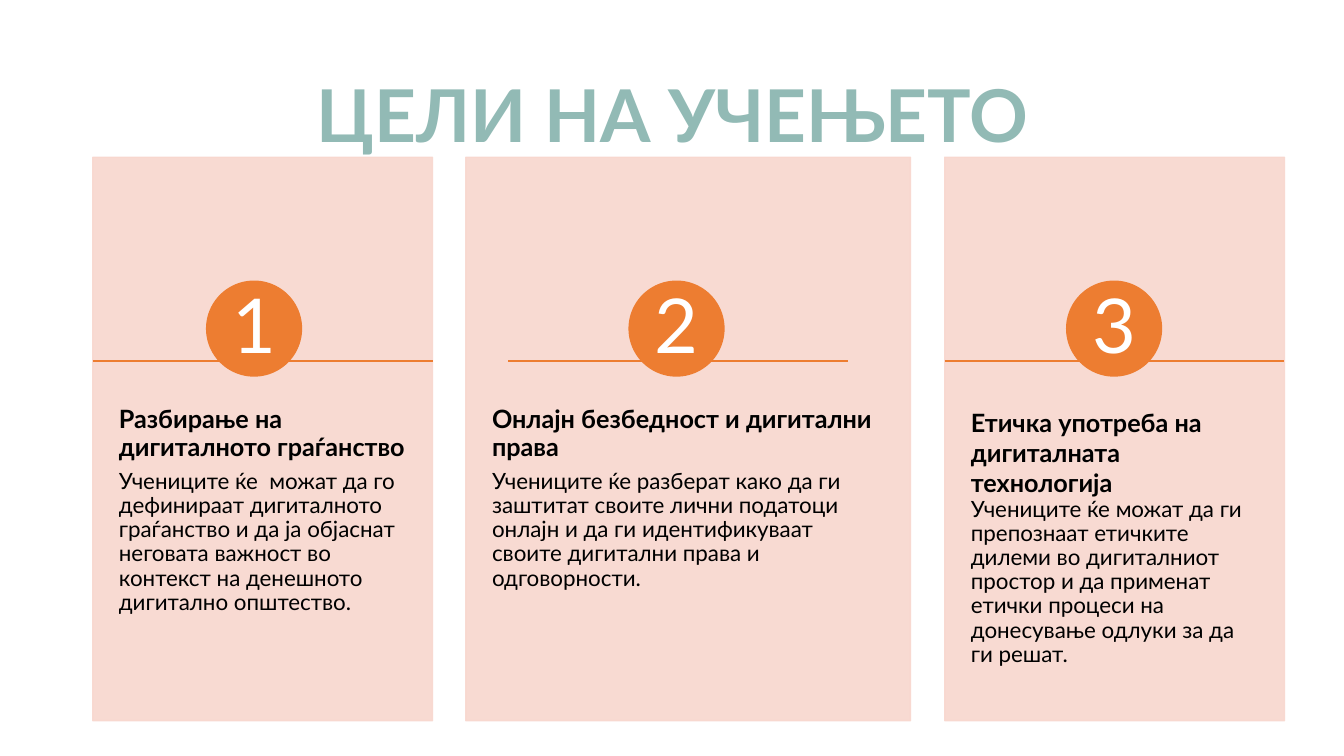
from pptx import Presentation
from pptx import util as u
from pptx.dml.color import RGBColor
from pptx.enum import shapes, text
from pptx.oxml import parse_xml
from pptx.oxml.ns import nsdecls

PX = 9144
FONT = "Lato"
COLORS = {"title": "92BAB5", "card": "F8D7CE", "accent": "ED7D31",
          "ink": "000000", "white": "FFFFFF"}

CARD_TOP, CARD_HEIGHT = 156, 559
CARDS = [
    dict(left=92, width=337, circle_offset=113, rule_offset=0,
         heading="Разбирање на дигиталното граѓанство",
         body="Учениците ќе  можат да го дефинираат дигиталното граѓанство и да ја "
              "објаснат неговата важност во контекст на денешното дигитално општество."),
    dict(left=462, width=441, circle_offset=162, rule_offset=42,
         heading="Онлајн безбедност и дигитални права",
         body="Учениците ќе разберат како да ги заштитат своите лични податоци онлајн "
              "и да ги идентификуваат своите дигитални права и одговорности."),
    dict(left=937, width=337, circle_offset=121, rule_offset=0,
         heading="Етичка употреба на дигиталната технологија",
         heading_spacing=1.0, heading_after=0,
         body="Учениците ќе можат да ги препознаат етичките дилеми во дигиталниот "
              "простор и да применат етички процеси на донесување одлуки за да ги решат."),
]


def px(*lengths):
    return [u.Emu(length * PX) for length in lengths]


def color(name):
    return RGBColor.from_string(COLORS[name])


def write(para, words, size, ink="ink", bold=False, align=text.PP_ALIGN.LEFT,
          spacing=0.9, after=6):
    para.alignment = align
    para.line_spacing = spacing
    para.space_before = u.Pt(0)
    para.space_after = u.Pt(after)
    span = para.add_run()
    span.text = words
    span.font.name = FONT
    span.font.size = u.Pt(size)
    span.font.bold = bold
    span.font.color.rgb = color(ink)


def set_frame(frame, side, end, anchor):
    frame.word_wrap = True
    frame.auto_size = text.MSO_AUTO_SIZE.NONE
    frame.vertical_anchor = anchor
    frame.margin_left = frame.margin_right = px(side)[0]
    frame.margin_top = frame.margin_bottom = px(end)[0]


def add_filled(page, kind, box, fill, opacity=100):
    shape = page.shapes.add_shape(kind, *px(*box))
    shape.shadow.inherit = False
    shape.fill.solid()
    shape.fill.fore_color.rgb = color(fill)
    shape.line.color.rgb = color(fill)
    shape.line.width = u.Pt(1)
    if opacity < 100:
        for tint in shape._element.spPr.xpath(".//a:srgbClr"):
            tint.append(parse_xml(
                f'<a:alpha {nsdecls("a")} val="{opacity * 1000}"/>'))
    return shape


def add_rule(page, left, top, width):
    rule = page.shapes.add_connector(
        shapes.MSO_CONNECTOR.STRAIGHT, *px(left, top, left + width, top))
    rule.line.color.rgb = color("accent")
    rule.line.width = u.Pt(1)
    rule._element.spPr.append(parse_xml(f'<a:effectLst {nsdecls("a")}/>'))


def add_title(page, words, box):
    title = page.shapes.title
    title.left, title.top, title.width, title.height = px(*box)
    set_frame(title.text_frame, 10, 5, text.MSO_ANCHOR.MIDDLE)
    write(title.text_frame.paragraphs[0], words, 52, ink="title", bold=True,
          align=text.PP_ALIGN.CENTER)


def add_card(page, box, number, heading, body, circle_offset, rule_offset,
             heading_spacing=0.9, heading_after=6):
    left, top, width, height = box
    add_filled(page, shapes.MSO_SHAPE.RECTANGLE, box, "card", opacity=90)

    frame = page.shapes.add_textbox(*px(left, top + 212, width, 335)).text_frame
    set_frame(frame, 26, 36, text.MSO_ANCHOR.TOP)
    write(frame.paragraphs[0], heading, 18, bold=True,
          spacing=heading_spacing, after=heading_after)
    write(frame.add_paragraph(), body, 16)

    circle = add_filled(page, shapes.MSO_SHAPE.OVAL,
                        (left + circle_offset, top + 123, 94, 94), "accent")
    set_frame(circle.text_frame, 7, 1, text.MSO_ANCHOR.MIDDLE)
    write(circle.text_frame.paragraphs[0], str(number), 54, ink="white",
          align=text.PP_ALIGN.CENTER)
    add_rule(page, left + rule_offset, top + 202, 337)


def main():
    deck = Presentation()
    deck.slide_width, deck.slide_height = px(1333, 750)
    page = deck.slides.add_slide(deck.slide_layouts.get_by_name("Title Only"))
    add_title(page, "ЦЕЛИ НА УЧЕЊЕТО", (92, 56, 1150, 124))
    for number, card in enumerate(CARDS, 1):
        details = dict(card)
        box = (details.pop("left"), CARD_TOP, details.pop("width"), CARD_HEIGHT)
        add_card(page, box, number, **details)
    deck.save("out.pptx")


if __name__ == "__main__":
    main()
